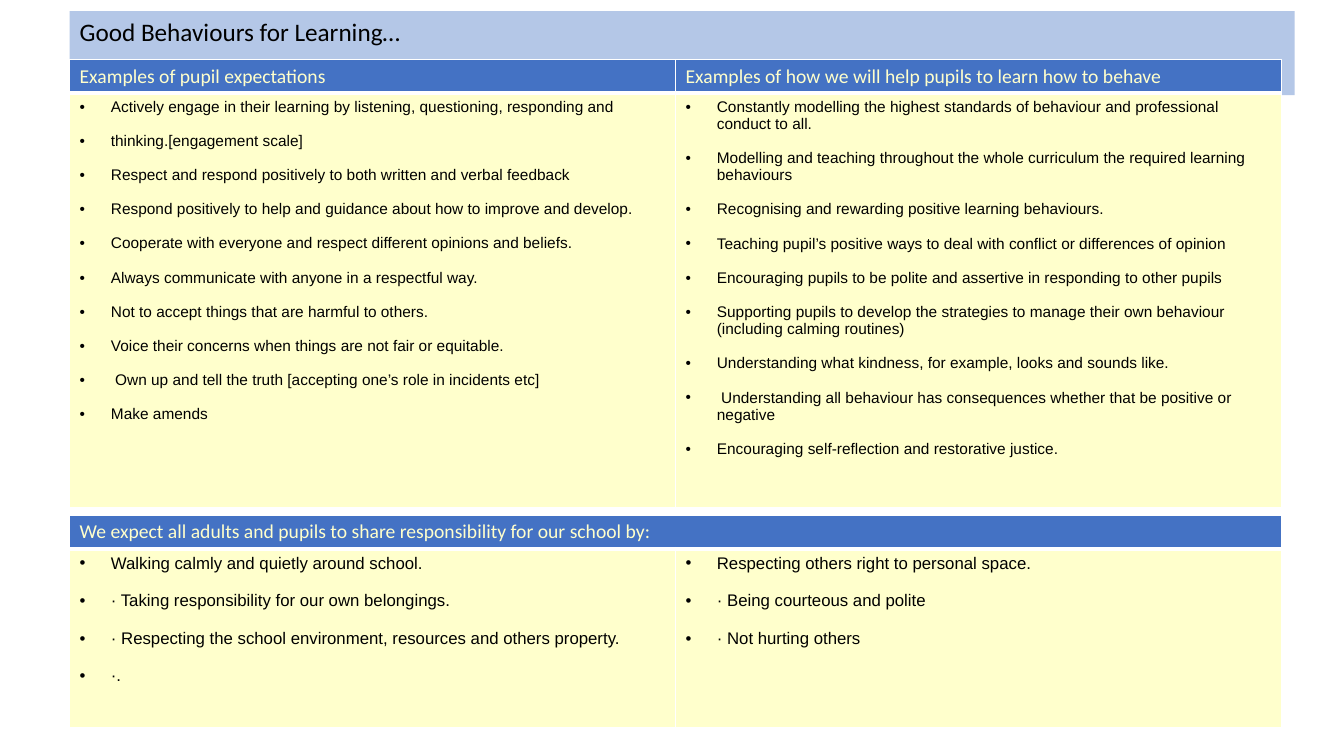
from lxml.etree import SubElement
from pptx import Presentation
from pptx.dml.color import RGBColor
from pptx.enum.text import MSO_ANCHOR, MSO_AUTO_SIZE, PP_ALIGN
from pptx.oxml import parse_xml
from pptx.oxml.ns import nsdecls, qn
from pptx.util import Inches, Pt

COLOURS = {"banner": "B4C7E7", "header": "4472C4", "body": "FFFFCC",
           "header_text": "FFFFCC", "text": "000000", "border": "FFFFFF"}
LEFT, COLUMN_WIDTH = 0.69, 6.01
HEADER_HEIGHT = 0.33
INDENT = Inches(0.31)

TABLES = [
    {
        "top": 0.59, "body_height": 4.11, "size": 11, "gap": 12.2,
        "headers": ["Examples of pupil expectations",
                    "Examples of how we will help pupils to learn how to behave"],
        "columns": [
            ["Actively engage in their learning by listening, questioning, responding and",
             "thinking.[engagement scale]",
             "Respect and respond positively to both written and verbal feedback",
             "Respond positively to help and guidance about how to improve and develop.",
             "Cooperate with everyone and respect different opinions and beliefs.",
             "Always communicate with anyone in a respectful way.",
             "Not to accept things that are harmful to others.",
             "Voice their concerns when things are not fair or equitable.",
             " Own up and tell the truth [accepting one’s role in incidents etc]",
             "Make amends"],
            ["Constantly modelling the highest standards of behaviour and professional conduct to all.",
             "Modelling and teaching throughout the whole curriculum the required learning behaviours",
             "Recognising and rewarding positive learning behaviours.",
             "Teaching pupil’s positive ways to deal with conflict or differences of opinion",
             "Encouraging pupils to be polite and assertive in responding to other pupils",
             "Supporting pupils to develop the strategies to manage their own behaviour "
             "(including calming routines)",
             "Understanding what kindness, for example, looks and sounds like.",
             " Understanding all behaviour has consequences whether that be positive or negative",
             "Encouraging self-reflection and restorative justice."],
        ],
    },
    {
        "top": 5.11, "body_height": 1.77, "size": 12, "gap": 13.4,
        "headers": ["We expect all adults and pupils to share responsibility for our school by:"],
        "columns": [
            ["Walking calmly and quietly around school.",
             "· Taking responsibility for our own belongings.",
             "· Respecting the school environment, resources and others property.",
             "·."],
            ["Respecting others right to personal space.",
             "· Being courteous and polite",
             "· Not hurting others"],
        ],
    },
]


def add_styled_run(paragraph, text, font_name, size, colour):
    run = paragraph.add_run()
    run.text = text
    for attribute, value in {"name": font_name, "size": Pt(size), "bold": False}.items():
        setattr(run.font, attribute, value)
    run.font.color.rgb = RGBColor.from_string(COLOURS[colour])


def style_cell(cell, colour, bottom_width):
    """Fill the cell and give it white borders."""
    cell.fill.solid()
    cell.fill.fore_color.rgb = RGBColor.from_string(COLOURS[colour])
    widths = {"lnL": 1, "lnR": 1, "lnT": 1, "lnB": bottom_width}
    for position, (side, width) in enumerate(widths.items()):
        border = parse_xml(
            f'<a:{side} {nsdecls("a")} w="{Pt(width)}"><a:solidFill>'
            f'<a:srgbClr val="{COLOURS["border"]}"/></a:solidFill></a:{side}>')
        cell._tc.get_or_add_tcPr().insert(position, border)


presentation = Presentation()
presentation.slide_width, presentation.slide_height = Inches(13.33), Inches(7.5)
slide = presentation.slides.add_slide(presentation.slide_layouts[5])

banner = slide.shapes.title
banner_place = {"left": LEFT, "top": 0.11, "width": 12.15, "height": 0.4}
for attribute, value in banner_place.items():
    setattr(banner, attribute, Inches(value))
banner.fill.solid()
banner.fill.fore_color.rgb = RGBColor.from_string(COLOURS["banner"])
banner_format = {"word_wrap": True, "auto_size": MSO_AUTO_SIZE.SHAPE_TO_FIT_TEXT,
                 "vertical_anchor": MSO_ANCHOR.TOP}
for attribute, value in banner_format.items():
    setattr(banner.text_frame, attribute, value)
banner_line = banner.text_frame.paragraphs[0]
banner_line.alignment = PP_ALIGN.LEFT
add_styled_run(banner_line, "Good Behaviours for Learning…", "Calibri", 18, "text")

for section in TABLES:
    table = slide.shapes.add_table(
        2, 2, Inches(LEFT), Inches(section["top"]), Inches(2 * COLUMN_WIDTH),
        Inches(HEADER_HEIGHT + section["body_height"])).table
    table.rows[0].height = Inches(HEADER_HEIGHT)
    table.rows[1].height = Inches(section["body_height"])

    for column, expectations in enumerate(section["columns"]):
        table.columns[column].width = Inches(COLUMN_WIDTH)
        style_cell(table.cell(0, column), "header", 3)
        body = table.cell(1, column)
        style_cell(body, "body", 1)
        for number, expectation in enumerate(expectations):
            frame = body.text_frame
            paragraph = frame.add_paragraph() if number else frame.paragraphs[0]
            properties = paragraph._p.get_or_add_pPr()
            properties.set("marL", str(INDENT))
            properties.set("indent", str(-INDENT))
            SubElement(properties, qn("a:buFont"), typeface="Arial")
            SubElement(properties, qn("a:buChar"), char="•")
            if number:
                paragraph.space_before = Pt(section["gap"])
            add_styled_run(paragraph, expectation, "Arial", section["size"], "text")

    if len(section["headers"]) == 1:
        table.cell(0, 0).merge(table.cell(0, 1))
    for column, header in enumerate(section["headers"]):
        header_line = table.cell(0, column).text_frame.paragraphs[0]
        add_styled_run(header_line, header, "Calibri", 14, "header_text")

presentation.save("out.pptx")
